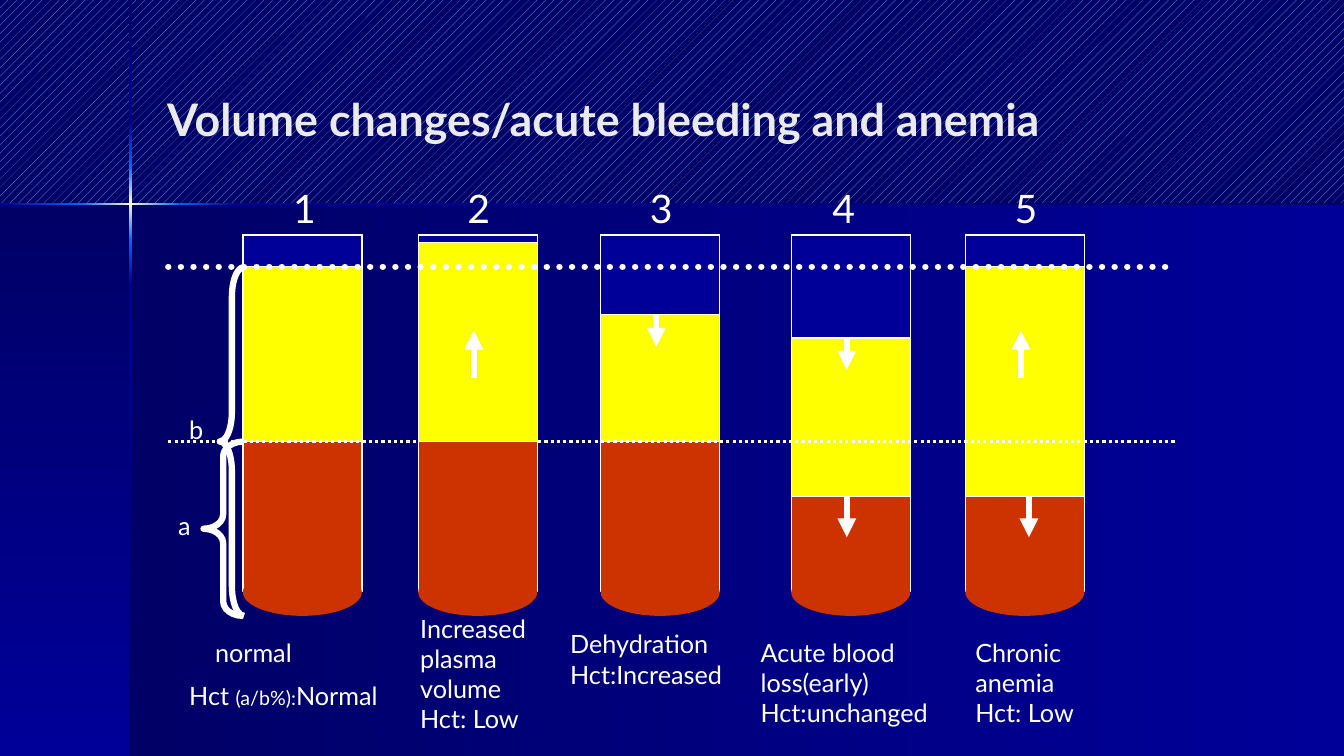
from copy import deepcopy

from pptx import Presentation
from pptx.dml.color import RGBColor
from pptx.enum.dml import MSO_LINE, MSO_PATTERN
from pptx.enum.shapes import MSO_CONNECTOR, MSO_SHAPE as Preset
from pptx.enum.text import MSO_ANCHOR as Anchor
from pptx.oxml.ns import qn
from pptx.oxml.xmlchemy import OxmlElement
from pptx.util import Cm, Pt

FONT = "Lato"
COLORS = {
    "hatch": "66CCFF", "navy": "000066", "blue": "000099", "glow": "0066FF",
    "spark": "FFFFCC", "title": "EAEAEA", "white": "FFFFFF",
    "cells": "CC3300", "plasma": "FFFF00",
}
TITLE = "Volume changes/acute bleeding and anemia"

# left, top, width, height, angle, colours
BACKDROP = [
    (3.28, 5.13, 30.59, 13.92, 0, ("navy", "blue")),
    (0, 5.13, 3.28, 13.92, 270, ("navy", "blue")),
    (3.25, 0, 0.08, 3.07, 270, ("navy", "blue")),
    (3.25, 7.16, 0.08, 11.89, 270, ("blue", "navy")),
    (5.99, 5.11, 27.88, 0.05, 0, ("blue", "navy")),
    (3.25, 6.05, 0.08, 1.11, 270, ("glow", "blue")),
    (3.25, 3.07, 0.08, 1.12, 270, ("blue", "glow")),
    (3.25, 4.19, 0.08, 1.86, 270, ("glow", "spark", "glow")),
    (0, 5.11, 2.06, 0.05, 0, ("blue", "glow")),
    (4.52, 5.11, 1.47, 0.05, 0, ("glow", "blue")),
    (2.06, 5.11, 2.46, 0.05, 0, ("glow", "spark", "glow")),
]

TUBE_TOP, TUBE_WIDTH, TUBE_HEIGHT = 5.92, 3, 8.99
CURVE_TOP, CURVE_HEIGHT = 14.33, 1.19
NORMAL_FILL, NORMAL_CELLS, LOW_CELLS = 6.72, 11.13, 12.52

# number: left, plasma top, cell top
TUBES = {
    1: (6.12, NORMAL_FILL, NORMAL_CELLS),
    2: (10.54, 6.12, NORMAL_CELLS),
    3: (15.14, 7.92, NORMAL_CELLS),
    4: (19.94, 8.52, LOW_CELLS),
    5: (24.33, NORMAL_FILL, LOW_CELLS),
}
NUMBER_LEFTS = [7.14, 11.53, 16.13, 20.73, 25.32]
CAPTIONS = [
    ("Increased plasma volume Hct: Low", (10.34, 15.32, 3.4, 3.3)),
    ("Dehydration Hct:Increased", (14.12, 15.72, 4.6, 1.78)),
    ("Acute blood loss(early) Hct:unchanged", (18.92, 15.93, 4.8, 2.54)),
    ("Chronic anemia Hct: Low", (24.33, 15.93, 3.4, 2.54)),
    ("b", (4.52, 10.31, 0.61, 1.02)),
    ("a", (4.24, 12.73, 0.61, 1.02)),
]
HCT_NORMAL = [("Hct ", 18), ("(a/b%):", 14), ("Normal", 18)]
# x, start, end
ARROWS = [
    (11.94, 9.53, 8.33), (16.54, 7.92, 8.74), (21.34, 8.53, 9.32),
    (21.34, 12.52, 13.54), (25.73, 9.53, 8.33), (25.93, 12.52, 13.54),
]
BRACES = [((5.54, 6.73, 0.61, 8.79), 1.22), ((5.13, 11.13, 0.99, 4.39), 0.37)]


def rgb(name):
    return RGBColor.from_string(COLORS[name])


def add_shape(slide, preset, box, fill=None, line=None, width=1):
    shape = slide.shapes.add_shape(preset, *map(Cm, box))
    shape.shadow.inherit = False
    if fill:
        shape.fill.solid()
        shape.fill.fore_color.rgb = rgb(fill)
    else:
        shape.fill.background()
    if line:
        shape.line.color.rgb = rgb(line)
        shape.line.width = Pt(width)
    else:
        shape.line.fill.background()
    return shape


def add_gradient(slide, box, angle, names):
    shape = add_shape(slide, Preset.RECTANGLE, box)
    shape.fill.gradient()
    shape.fill.gradient_angle = angle
    stop_list = next(shape._element.iter(qn("a:gsLst")))
    for _ in names[2:]:
        stop_list.append(deepcopy(stop_list[0]))
    for index, (stop, name) in enumerate(zip(shape.fill.gradient_stops, names)):
        stop.position = index / (len(names) - 1)
        stop.color.rgb = rgb(name)


def add_line(slide, start, end, width, dash=None, cap=None, arrow=False):
    line = slide.shapes.add_connector(MSO_CONNECTOR.STRAIGHT, *map(Cm, start + end))
    line.line.color.rgb = rgb("white")
    line.line.width = Pt(width)
    if dash:
        line.line.dash_style = dash
    outline = line.line._get_or_add_ln()
    if cap:
        outline.set("cap", cap)
    if arrow:
        head = OxmlElement("a:tailEnd")
        head.set("type", "triangle")
        outline.append(head)
    line._element.spPr.append(OxmlElement("a:effectLst"))


def add_run(paragraph, text, size=18, color="white", bold=False):
    run = paragraph.add_run()
    run.text = text
    run.font.name = FONT
    run.font.size = Pt(size)
    run.font.bold = bold
    run.font.color.rgb = rgb(color)


def add_text(slide, text, box, anchor=Anchor.TOP, **style):
    frame = slide.shapes.add_textbox(*map(Cm, box)).text_frame
    frame.word_wrap = True
    frame.vertical_anchor = anchor
    add_run(frame.paragraphs[0], text, **style)
    return frame


def add_tube(slide, left, plasma_top, cell_top):
    layers = [("cells", TUBE_HEIGHT), ("plasma", cell_top - TUBE_TOP)]
    for fill, height in layers:
        add_shape(slide, Preset.RECTANGLE, (left, TUBE_TOP, TUBE_WIDTH, height), fill, "white")
    add_shape(slide, Preset.OVAL, (left, CURVE_TOP, TUBE_WIDTH, CURVE_HEIGHT), "cells")
    empty = (left, TUBE_TOP, TUBE_WIDTH, plasma_top - TUBE_TOP)
    add_shape(slide, Preset.RECTANGLE, empty, "blue", "white")


def main():
    """Build the slide on blood volume changes and anemia."""
    presentation = Presentation()
    presentation.slide_width, presentation.slide_height = Cm(33.87), Cm(19.05)
    slide = presentation.slides.add_slide(presentation.slide_layouts[6])
    background = slide.background.fill
    background.patterned()
    background.pattern = MSO_PATTERN.PERCENT_20
    background.fore_color.rgb = rgb("hatch")
    background.back_color.rgb = rgb("navy")

    for *box, angle, names in BACKDROP:
        add_gradient(slide, box, angle, names)
    add_text(slide, TITLE, (3.96, 1, 27.94, 3.99), Anchor.MIDDLE,
             size=32, color="title", bold=True)

    for number in (1, 3, 4, 5):
        add_tube(slide, *TUBES[number])
    add_line(slide, (4.24, NORMAL_CELLS), (29.64, NORMAL_CELLS), 2.25, MSO_LINE.ROUND_DOT)
    add_tube(slide, *TUBES[2])
    add_line(slide, (4.24, NORMAL_FILL), (29.64, NORMAL_FILL), 4.5, MSO_LINE.ROUND_DOT, "rnd")

    for x, start, end in ARROWS:
        add_line(slide, (x, start), (x, end), 4.5, arrow=True)
    for box, curve in BRACES:
        brace = add_shape(slide, Preset.LEFT_BRACE, box, line="white", width=4.5)
        brace.adjustments[0] = curve

    for number, left in zip(TUBES, NUMBER_LEFTS):
        add_text(slide, str(number), (left, 4.52, 1.6, 1.45), size=28)
    for text, box in CAPTIONS:
        add_text(slide, text, box)
    normal = add_text(slide, "normal", (4.52, 15.93, 5.61, 2.16))
    normal.paragraphs[0]._p.get_or_add_pPr().set("marL", str(Cm(0.65)))
    hct = normal.add_paragraph()
    hct.space_before = Pt(9)
    for text, size in HCT_NORMAL:
        add_run(hct, text, size)

    presentation.save("out.pptx")


if __name__ == "__main__":
    main()
